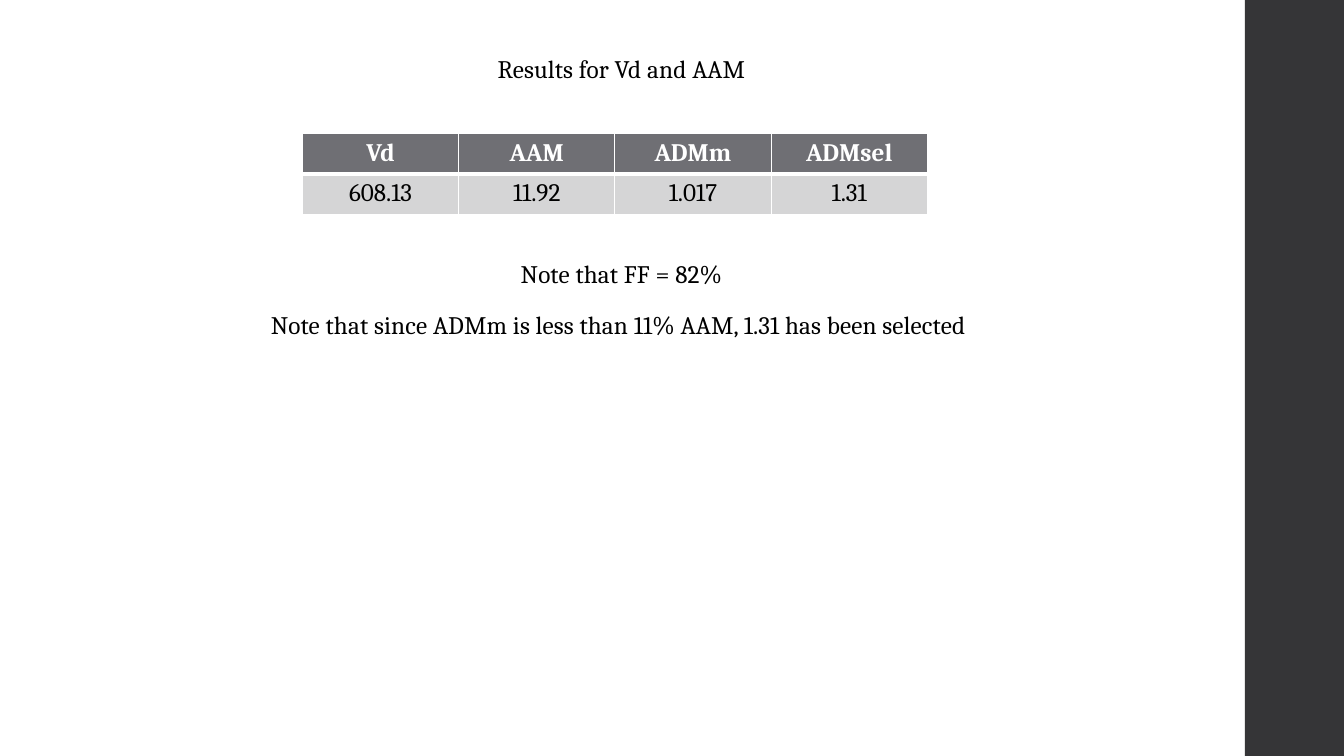
import dataclasses

import pptx
import pptx.dml.color
import pptx.enum.shapes
import pptx.enum.text
import pptx.oxml
import pptx.oxml.ns
import pptx.util

Pt = pptx.util.Pt
RGB = pptx.dml.color.RGBColor.from_string
CENTER = pptx.enum.text.PP_ALIGN.CENTER


@dataclasses.dataclass(frozen=True)
class Theme:
    font: str = "Cambria"
    size: float = 18
    ink: str = "000000"
    white: str = "FFFFFF"
    sidebar: str = "353537"
    header: str = "6F6F74"
    body: str = "D5D5D6"
    rule: float = 1
    header_rule: float = 3


THEME = Theme()
RESULTS = (("Vd", "AAM", "ADMm", "ADMsel"), ("608.13", "11.92", "1.017", "1.31"))
# Each statement with the space before it
STATEMENTS = (
    ("Results for Vd and AAM", 0),
    ("Note that FF = 82%", 123.5),
    ("Note that since ADMm is less than 11% AAM, 1.31 has been selected ", 14),
)


def add_run(paragraph, text, color, bold=False):
    run = paragraph.add_run()
    run.text = text
    look = {"name": THEME.font, "size": Pt(THEME.size), "bold": bold}
    for attribute, value in look.items():
        setattr(run.font, attribute, value)
    run.font.color.rgb = RGB(color)
    return run


def add_sidebar(slide, left, top, width, height):
    sidebar = slide.shapes.add_shape(
        pptx.enum.shapes.MSO_SHAPE.RECTANGLE, Pt(left), Pt(top), Pt(width), Pt(height))
    sidebar.shadow.inherit = False
    sidebar.fill.solid()
    sidebar.fill.fore_color.rgb = RGB(THEME.sidebar)
    sidebar.line.fill.background()


def add_statements(slide, left, top, width, height):
    frame = slide.shapes.add_textbox(Pt(left), Pt(top), Pt(width), Pt(height)).text_frame
    frame.word_wrap = True
    frame.margin_top = Pt(40)
    for index, (text, gap) in enumerate(STATEMENTS):
        statement = frame.add_paragraph() if index else frame.paragraphs[0]
        spacing = {"alignment": CENTER, "line_spacing": 0.95,
                   "space_before": Pt(gap), "space_after": Pt(2)}
        for attribute, value in spacing.items():
            setattr(statement, attribute, value)
        run = add_run(statement, text, THEME.ink)
        run.font._element.set("spc", "10")


def add_borders(cell, widths):
    properties = cell._tc.get_or_add_tcPr()
    for side, width in widths.items():
        properties.append(pptx.oxml.parse_xml(
            f'<a:ln{side} {pptx.oxml.ns.nsdecls("a")} w="{Pt(width)}"><a:solidFill>'
            f'<a:srgbClr val="{THEME.white}"/></a:solidFill></a:ln{side}>'))


def add_results(slide, left, top, width, height):
    table = slide.shapes.add_table(
        len(RESULTS), len(RESULTS[0]), Pt(left), Pt(top), Pt(width), Pt(height)).table
    thin, thick = THEME.rule, THEME.header_rule
    # Fill, text colour, weight, and top and bottom rules of each row
    row_looks = ((THEME.header, THEME.white, True, thin, thick),
                 (THEME.body, THEME.ink, False, thick, thin))
    for row, (values, look) in enumerate(zip(RESULTS, row_looks)):
        fill, color, bold, above, below = look
        for column, value in enumerate(values):
            cell = table.cell(row, column)
            add_borders(cell, {"L": thin, "R": thin, "T": above, "B": below})
            cell.fill.solid()
            cell.fill.fore_color.rgb = RGB(fill)
            paragraph = cell.text_frame.paragraphs[0]
            paragraph.alignment = CENTER
            add_run(paragraph, value, color, bold)


def main():
    deck = pptx.Presentation()
    deck.slide_width, deck.slide_height = Pt(960), Pt(540)
    slide = deck.slides.add_slide(deck.slide_layouts[6])
    add_sidebar(slide, 889.2, 0, 70.8, 540)
    add_statements(slide, 0, 0, 888, 540)
    add_results(slide, 216, 95.2, 446.4, 58.4)
    deck.save("out.pptx")


if __name__ == "__main__":
    main()
